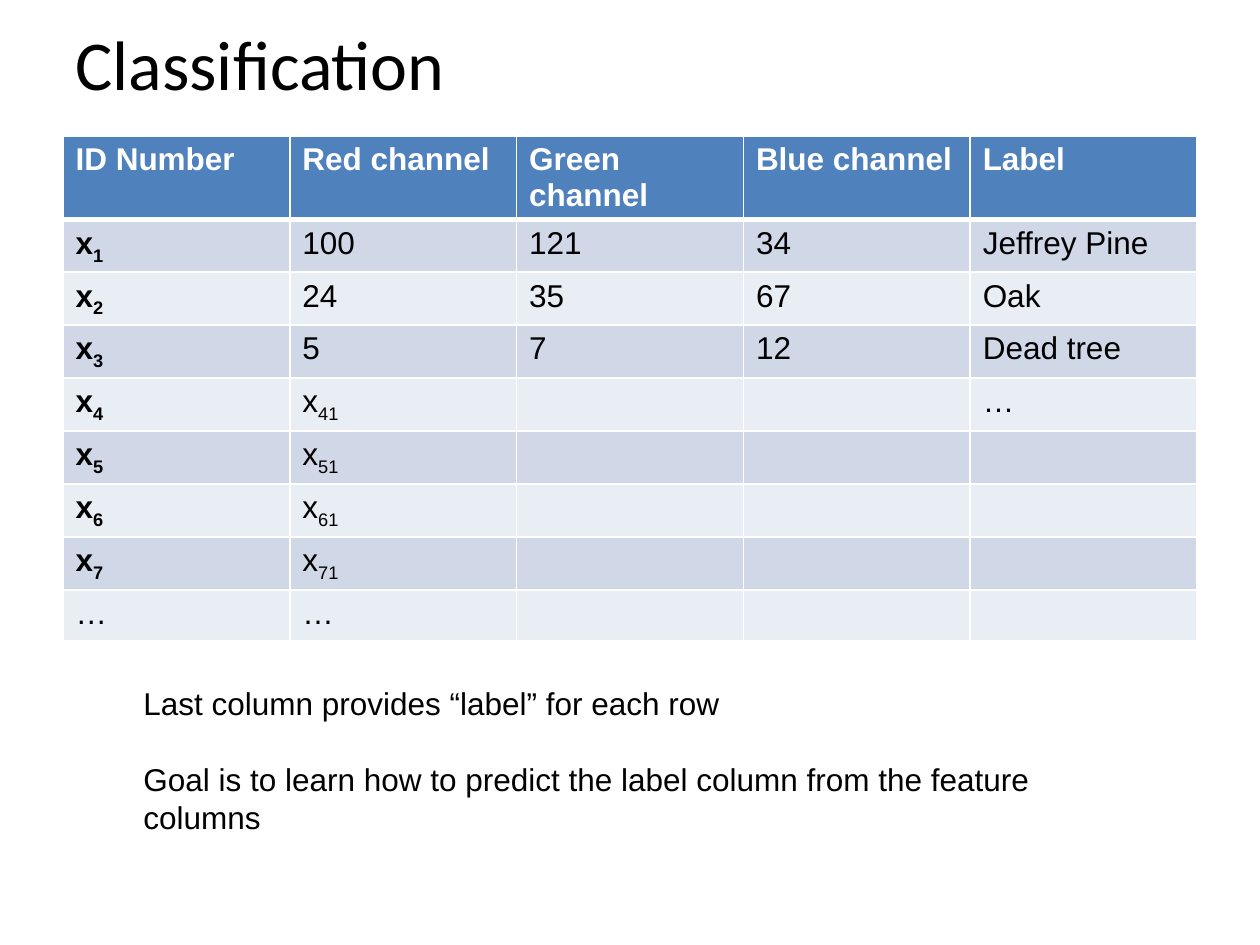
"""Build the Classification slide: a labelled data table and two remarks."""
from dataclasses import dataclass

from lxml import etree
from pptx import Presentation
from pptx.dml.color import RGBColor
from pptx.enum.text import MSO_ANCHOR, PP_ALIGN
from pptx.oxml.ns import qn
from pptx.util import Emu, Pt

EMU_PER_PX = 9144
TITLE_ONLY = 5
LEFT = PP_ALIGN.LEFT
MIDDLE = MSO_ANCHOR.MIDDLE


@dataclass(frozen=True)
class Theme:
    title_font: str = "Calibri"
    body_font: str = "Arial"
    title_size: int = 40
    body_size: int = 18
    remark_leading: float = 21.7
    text: str = "000000"
    header_text: str = "FFFFFF"
    header_fill: str = "4F81BD"
    bands: tuple[str, str] = ("D0D8E8", "E9EDF4")
    border: str = "FFFFFF"
    thin: int = 1
    thick: int = 3


@dataclass(frozen=True)
class Box:
    left: int
    top: int
    width: int
    height: int

    def emu(self) -> tuple[Emu, ...]:
        return tuple(px(n) for n in (self.left, self.top, self.width, self.height))


@dataclass(frozen=True)
class CellStyle:
    fill: str
    color: str
    bold: bool
    top: int
    bottom: int


THEME = Theme()
TITLE_BOX = Box(50, 0, 900, 100)
TABLE_BOX = Box(50, 108, 900, 365)
REMARKS_BOX = Box(104, 538, 821, 131)
SUBSCRIPT_MARK = "_"
SAMPLES = (
    ("ID Number", "Red channel", "Green channel", "Blue channel", "Label"),
    ("x_1", "100", "121", "34", "Jeffrey Pine"),
    ("x_2", "24", "35", "67", "Oak"),
    ("x_3", "5", "7", "12", "Dead tree"),
    ("x_4", "x_41", "", "", "…"),
    *((f"x_{n}", f"x_{n}1", "", "", "") for n in (5, 6, 7)),
    ("…", "…", "", "", ""),
)
REMARKS = (
    "Last column provides “label” for each row",
    "Goal is to learn how to predict the label column from the feature columns",
)


def px(length: int) -> Emu:
    return Emu(length * EMU_PER_PX)


def style_paragraph(paragraph, name: str, size: int, color: str, bold: bool = False) -> None:
    paragraph.alignment = LEFT
    font = paragraph.font
    font.name, font.size, font.bold = name, Pt(size), bold
    font.color.rgb = RGBColor.from_string(color)


def add_border(cell, side: str, points: int) -> None:
    properties = cell._tc.get_or_add_tcPr()
    line = etree.SubElement(properties, qn(f"a:ln{side}"), w=str(Pt(points)))
    fill = etree.SubElement(line, qn("a:solidFill"))
    etree.SubElement(fill, qn("a:srgbClr"), val=THEME.border)


def cell_style(row: int, column: int, entry: str) -> CellStyle:
    if row == 0:
        return CellStyle(THEME.header_fill, THEME.header_text, True, THEME.thin, THEME.thick)
    is_id = column == 0 and SUBSCRIPT_MARK in entry
    top = THEME.thick if row == 1 else THEME.thin
    return CellStyle(THEME.bands[(row - 1) % 2], THEME.text, is_id, top, THEME.thin)


def fill_cell(cell, entry: str, style: CellStyle) -> None:
    for side, points in zip("LRTB", (THEME.thin, THEME.thin, style.top, style.bottom)):
        add_border(cell, side, points)
    cell.fill.solid()
    cell.fill.fore_color.rgb = RGBColor.from_string(style.fill)
    paragraph = cell.text_frame.paragraphs[0]
    style_paragraph(paragraph, THEME.body_font, THEME.body_size, style.color, style.bold)
    base, _, subscript = entry.partition(SUBSCRIPT_MARK)
    if base:
        paragraph.add_run().text = base
    if subscript:
        index = paragraph.add_run()
        index.text = subscript
        index._r.get_or_add_rPr().set("baseline", "-25000")


def add_title(slide, text: str) -> None:
    title = slide.shapes.title
    title.left, title.top, title.width, title.height = TITLE_BOX.emu()
    title.text_frame.text = text
    title.text_frame.vertical_anchor = MIDDLE
    style_paragraph(title.text_frame.paragraphs[0], THEME.title_font, THEME.title_size, THEME.text)


def add_samples(slide) -> None:
    columns = len(SAMPLES[0])
    table = slide.shapes.add_table(len(SAMPLES), columns, *TABLE_BOX.emu()).table
    table.horz_banding = False
    for row, entries in enumerate(SAMPLES):
        for column, entry in enumerate(entries):
            fill_cell(table.cell(row, column), entry, cell_style(row, column, entry))


def add_remarks(slide) -> None:
    frame = slide.shapes.add_textbox(*REMARKS_BOX.emu()).text_frame
    frame.word_wrap = True
    for position, remark in enumerate(REMARKS):
        paragraph = frame.add_paragraph() if position else frame.paragraphs[0]
        paragraph.text = remark
        paragraph.line_spacing = Pt(THEME.remark_leading)
        paragraph.space_before = Pt(THEME.remark_leading if position else 0)
        style_paragraph(paragraph, THEME.body_font, THEME.body_size, THEME.text)


def main() -> None:
    presentation = Presentation()
    presentation.slide_width, presentation.slide_height = px(1000), px(750)
    slide = presentation.slides.add_slide(presentation.slide_layouts[TITLE_ONLY])
    add_title(slide, "Classification")
    add_samples(slide)
    add_remarks(slide)
    presentation.save("out.pptx")


if __name__ == "__main__":
    main()
